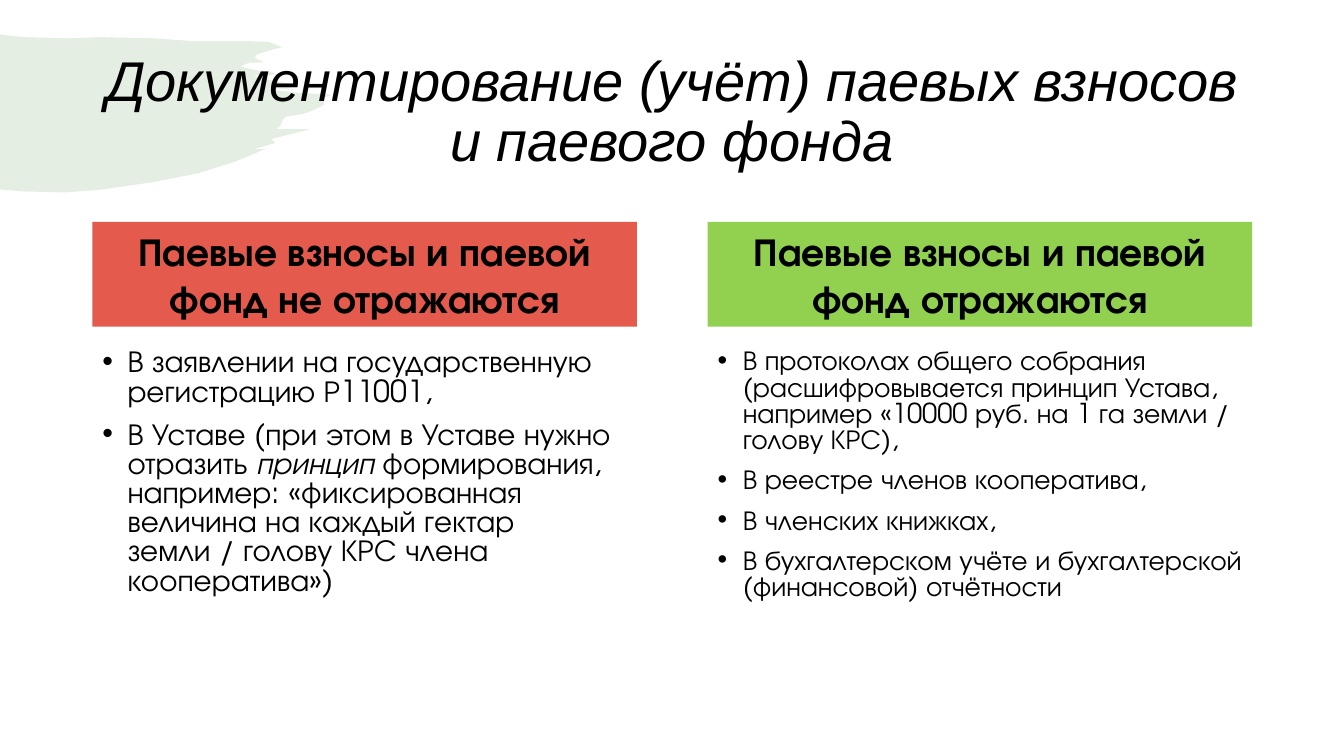
from dataclasses import dataclass

from lxml.etree import SubElement
from pptx import Presentation
from pptx.dml.color import RGBColor
from pptx.enum.shapes import MSO_SHAPE
from pptx.enum.text import MSO_ANCHOR, PP_ALIGN
from pptx.oxml.ns import qn
from pptx.slide import Slide
from pptx.text.text import TextFrame
from pptx.util import Pt

BLACK = RGBColor(0x00, 0x00, 0x00)
RED = RGBColor(0xE4, 0x5A, 0x4C)
LIME = RGBColor(0x92, 0xD0, 0x50)
PALE_SAGE = RGBColor(0xE5, 0xEE, 0xE2)

TITLE_FONT = "Arial"
BODY_FONT = "TeX Gyre Adventor"
MARGIN = 66
COLUMN_WIDTH = 389
COLUMN_STEP = 439.5
BULLET_INDENT = 18

BRUSH_OUTLINE = (
    (0, 24.5), (4.3, 25.2), (18, 26.6), (47.5, 27.4), (73.4, 26.6),
    (108.7, 27.4), (139.7, 29.5), (178.6, 29.5), (192, 30), (201.6, 33.8),
    (195, 35.3), (183.6, 38.9), (182, 41), (184.3, 42.5), (188.6, 44.6),
    (178, 44.8), (171.4, 47.5), (177, 49), (184.3, 50.4), (191.5, 51),
    (198, 53.3), (180.7, 54), (189.4, 56.2), (196.6, 58.3), (201.6, 59),
    (207.4, 59.8), (208.8, 61.2), (206.6, 63.4), (204.5, 63.4), (189.4, 63.4),
    (213, 66.4), (237.6, 67.7), (231, 69.8), (231.5, 75), (229, 76.3),
    (221, 79.9), (216, 81.4), (203.8, 83.5), (201.6, 86.4), (200.2, 90),
    (197.3, 92.2), (221.8, 92.2), (193.7, 99.4), (196.6, 102.2),
    (181.4, 106.6), (189.4, 106.6), (168, 115.5), (141.8, 123.8),
    (110, 130), (73.4, 135.4), (46.8, 137.5), (16.6, 136.8), (0, 135.4),
)


@dataclass(frozen=True)
class Column:
    heading: str
    color: RGBColor
    bullet_size: float
    bullets: tuple[str, ...]
    emphasis: str = ""


COLUMNS = (
    Column(
        "Паевые взносы и паевой фонд не отражаются", RED, 21.7,
        (
            "В заявлении на государственную регистрацию Р11001,",
            "В Уставе (при этом в Уставе нужно отразить принцип формирования, "
            "например: «фиксированная величина на каждый гектар земли / "
            "голову КРС члена кооператива»)",
        ),
        emphasis="принцип",
    ),
    Column(
        "Паевые взносы и паевой фонд отражаются", LIME, 19.6,
        (
            "В протоколах общего собрания (расшифровывается принцип Устава, "
            "например «10000 руб. на 1 га земли / голову КРС),",
            "В реестре членов кооператива,",
            "В членских книжках,",
            "В бухгалтерском учёте и бухгалтерской (финансовой) отчётности",
        ),
    ),
)


def write(
    frame: TextFrame, text: str, *, size: float, font: str = BODY_FONT,
    bold: bool = False, italic: bool = False, emphasis: str = "",
    align: PP_ALIGN = PP_ALIGN.LEFT, line_spacing: float = 1.0,
    space_before: float = 10, bulleted: bool = False,
) -> None:
    first = frame.paragraphs[0]
    paragraph = frame.add_paragraph() if first.runs else first
    paragraph.alignment = align
    paragraph.line_spacing = line_spacing
    paragraph.space_before = Pt(space_before)
    if bulleted:
        properties = paragraph._p.get_or_add_pPr()
        properties.set("marL", str(Pt(BULLET_INDENT)))
        properties.set("indent", str(-Pt(BULLET_INDENT)))
        SubElement(properties, qn("a:buFont"), typeface="Arial")
        SubElement(properties, qn("a:buChar"), char="•")
    for part in text.partition(emphasis) if emphasis else (text,):
        if part:
            run = paragraph.add_run()
            run.text = part
            run.font.name = font
            run.font.size = Pt(size)
            run.font.bold = bold
            run.font.italic = italic or part == emphasis
            run.font.color.rgb = BLACK


def add_text_area(slide: Slide, left: float, top: float, width: float, height: float) -> TextFrame:
    frame = slide.shapes.add_textbox(Pt(left), Pt(top), Pt(width), Pt(height)).text_frame
    frame.word_wrap = True
    return frame


def add_brush_stroke(slide: Slide) -> None:
    start, *rest = [(Pt(x), Pt(y)) for x, y in BRUSH_OUTLINE]
    builder = slide.shapes.build_freeform(*start)
    builder.add_line_segments(rest, close=True)
    stroke = builder.convert_to_shape()
    stroke.shadow.inherit = False
    stroke.fill.solid()
    stroke.fill.fore_color.rgb = PALE_SAGE
    stroke.line.fill.background()


def add_column(slide: Slide, column: Column, left: float) -> None:
    banner = slide.shapes.add_shape(
        MSO_SHAPE.RECTANGLE, Pt(left), Pt(158.5), Pt(COLUMN_WIDTH), Pt(74.8)
    )
    banner.shadow.inherit = False
    banner.fill.solid()
    banner.fill.fore_color.rgb = column.color
    banner.line.fill.background()
    banner.text_frame.word_wrap = True
    banner.text_frame.vertical_anchor = MSO_ANCHOR.BOTTOM
    write(banner.text_frame, column.heading, size=28, bold=True, align=PP_ALIGN.CENTER)

    details = add_text_area(slide, left, 246.2, COLUMN_WIDTH, 241.2)
    for bullet in column.bullets:
        write(
            details, bullet, size=column.bullet_size, emphasis=column.emphasis,
            line_spacing=0.8, bulleted=True,
        )


def main() -> None:
    presentation = Presentation()
    presentation.slide_width = Pt(960)
    presentation.slide_height = Pt(540)
    slide = presentation.slides.add_slide(presentation.slide_layouts[6])

    add_brush_stroke(slide)
    title = add_text_area(slide, MARGIN, 28.8, 828, 104.4)
    title.vertical_anchor = MSO_ANCHOR.MIDDLE
    write(
        title, "Документирование (учёт) паевых взносов и паевого фонда",
        size=40, font=TITLE_FONT, italic=True, align=PP_ALIGN.CENTER,
        line_spacing=0.9, space_before=0,
    )
    for index, column in enumerate(COLUMNS):
        add_column(slide, column, MARGIN + index * COLUMN_STEP)

    presentation.save("out.pptx")


if __name__ == "__main__":
    main()
